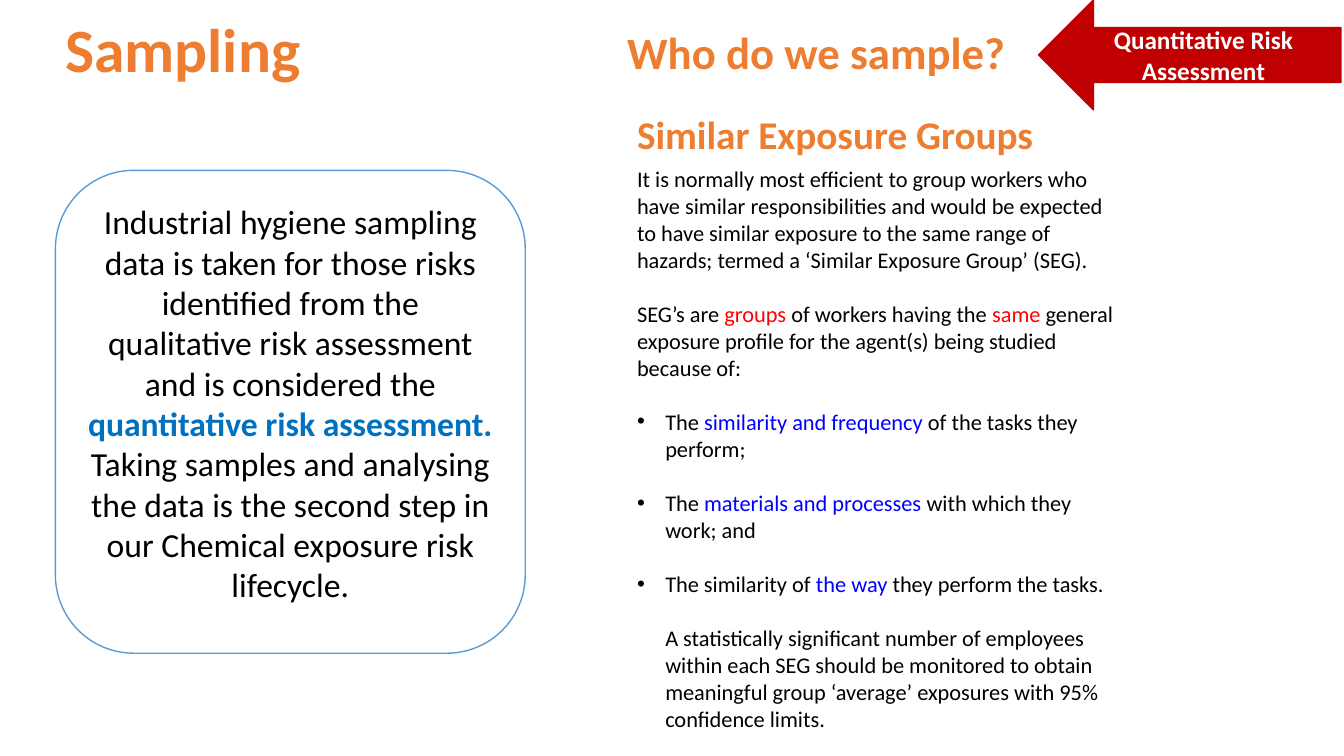
"""Build the slide on sampling and similar exposure groups."""
from lxml import etree
from pptx import Presentation
from pptx.dml.color import RGBColor
from pptx.enum.shapes import MSO_SHAPE
from pptx.enum.text import MSO_ANCHOR, MSO_AUTO_SIZE, PP_ALIGN
from pptx.oxml.ns import qn
from pptx.util import Inches, Pt

TOP, MID = MSO_ANCHOR.TOP, MSO_ANCHOR.MIDDLE
LEFT, CENTER = PP_ALIGN.LEFT, PP_ALIGN.CENTER
ROUND, ARROW = MSO_SHAPE.ROUNDED_RECTANGLE, MSO_SHAPE.LEFT_ARROW
GROW = MSO_AUTO_SIZE.SHAPE_TO_FIT_TEXT

FONT = "Calibri"
COLORS = {"orange": "ED7D31", "black": "000000", "white": "FFFFFF",
          "sky": "0070C0", "edge": "5B9BD5", "red": "FF0000",
          "blue": "0000FF", "crimson": "C00000"}

TOPIC = ["Sampling"]
TITLE = ["Who do we sample?"]
HEAD = ["Similar Exposure Groups"]
TAG = ["Quantitative Risk Assessment"]
INTRO = [[
    "Industrial hygiene sampling data is taken for those risks identified "
    "from the qualitative risk assessment and is considered the ",
    ("quantitative risk assessment. ", "sky", True),
    "Taking samples and analysing the data is the second step in our "
    "Chemical exposure risk lifecycle."]]
GROUPS = [
    "It is normally most efficient to group workers who have similar "
    "responsibilities and would be expected to have similar exposure to the "
    "same range of hazards; termed a ‘Similar Exposure Group’ (SEG).",
    ["SEG’s are ", ("groups", "red", False), " of workers having the ",
     ("same", "red", False),
     " general exposure profile for the agent(s) being studied because of:"],
    ["The ", ("similarity and frequency ", "blue", False),
     "of the tasks they perform;"],
    ["The ", ("materials and processes ", "blue", False),
     "with which they work; and"],
    ["The similarity of ", ("the way ", "blue", False),
     "they perform the tasks."],
    "A statistically significant number of employees within each SEG should "
    "be monitored to obtain meaningful group ‘average’ exposures with 95% "
    "confidence limits."]
BULLETS = (2, 3, 4)
CLOSING = 5
INDENT = 0.28
GAP = 19.5


def rgb(name):
    return RGBColor.from_string(COLORS[name])


def write(shape, paras, size, color, bold=False, align=LEFT, anchor=TOP,
          after=0, line=None):
    """Fill a shape with paragraphs of plain or coloured runs."""
    frame = shape.text_frame
    frame.word_wrap = True
    frame.vertical_anchor = anchor
    for i, parts in enumerate(paras):
        para = frame.paragraphs[0] if i == 0 else frame.add_paragraph()
        para.alignment = align
        para.space_before = Pt(0)
        para.space_after = Pt(after)
        para.line_spacing = line
        for part in [parts] if isinstance(parts, str) else parts:
            text, tint, heavy = ((part, color, bold)
                                 if isinstance(part, str) else part)
            run = para.add_run()
            run.text = text
            run.font.name = FONT
            run.font.size = Pt(size)
            run.font.bold = heavy
            run.font.color.rgb = rgb(tint)
    return frame


def indent(para, bullet):
    """Indent a paragraph, with a hanging bullet if asked."""
    props = para._p.get_or_add_pPr()
    props.set("marL", str(Inches(INDENT)))
    if bullet:
        props.set("indent", str(-Inches(INDENT)))
        font = etree.SubElement(props, qn("a:buFont"))
        font.set("typeface", "Arial")
        etree.SubElement(props, qn("a:buChar")).set("char", "•")


def main():
    deck = Presentation()
    deck.slide_width, deck.slide_height = Inches(13.33), Inches(7.5)
    slide = deck.slides.add_slide(deck.slide_layouts[5])
    shapes = slide.shapes

    def box(*place):
        return shapes.add_textbox(*map(Inches, place))

    def block(kind, place, fill, edge):
        shape = shapes.add_shape(kind, *map(Inches, place))
        shape.shadow.inherit = False
        shape.fill.solid()
        shape.fill.fore_color.rgb = rgb(fill)
        shape.line.color.rgb = rgb(edge)
        shape.line.width = Pt(1)
        return shape

    title = shapes.title
    title.left, title.top = Inches(6.12), Inches(0.36)
    title.width, title.height = Inches(4.43), Inches(0.37)
    write(title, TITLE, 32, "orange", bold=True, anchor=MID, line=0.9)

    write(box(0.55, 0.14, 10.2, 0.77), TOPIC, 44, "orange", bold=True,
          anchor=MID, line=0.9)

    card = block(ROUND, (0.55, 1.69, 4.66, 4.79), "white", "edge")
    frame = write(card, INTRO, 24, "black", align=CENTER)
    frame.margin_left = frame.margin_right = Inches(0.08)
    frame.margin_top = frame.margin_bottom = Inches(0.08)

    frame = write(box(6.22, 1.59, 5, 6.29), GROUPS, 16, "black", after=GAP)
    frame.auto_size = GROW
    for i in (*BULLETS, CLOSING):
        indent(frame.paragraphs[i], i in BULLETS)
    frame.paragraphs[CLOSING].space_after = Pt(0)

    write(box(6.22, 1.04, 4.53, 0.55), HEAD, 28, "orange", bold=True, after=6)

    arrow = block(ARROW, (10.3, 0, 3, 1.09), "crimson", "crimson")
    write(arrow, TAG, 18, "white", bold=True, align=CENTER, anchor=MID)

    deck.save("out.pptx")


if __name__ == "__main__":
    main()
